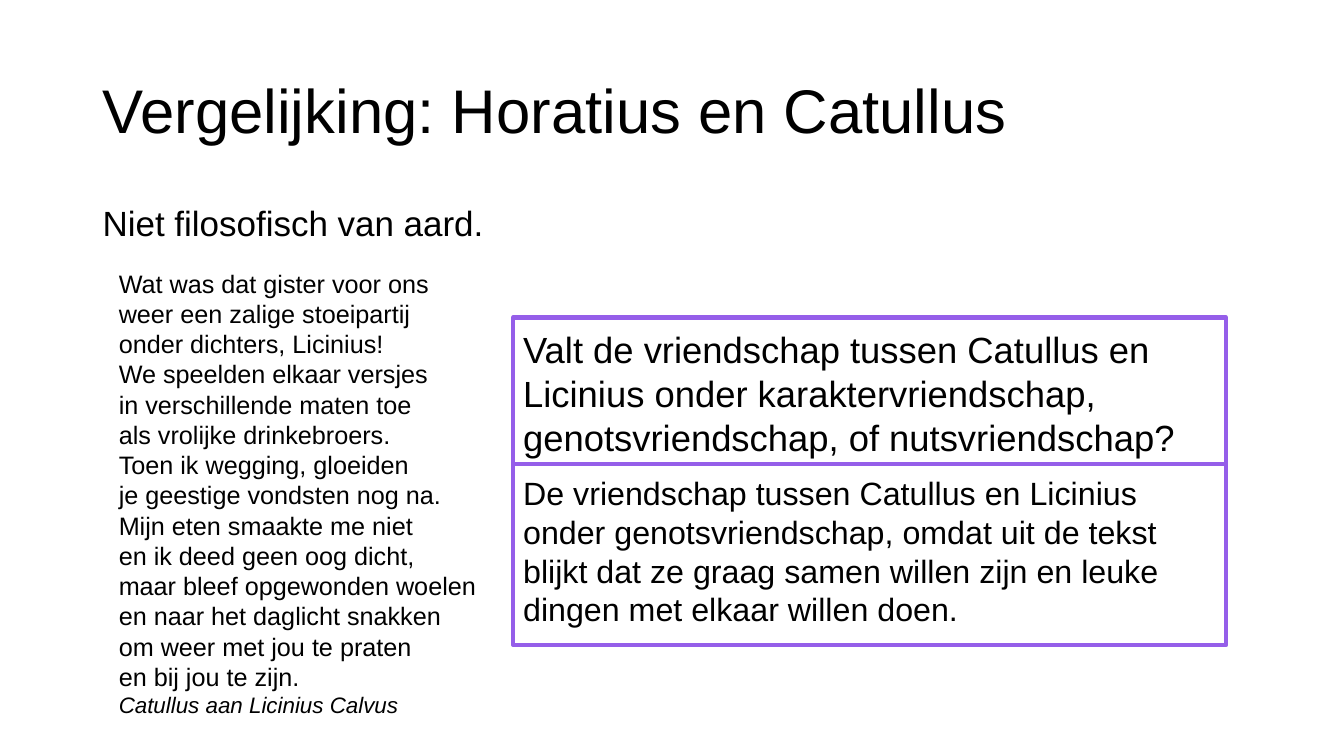
from lxml.etree import SubElement
from pptx import Presentation
from pptx.dml.color import RGBColor
from pptx.enum.shapes import MSO_SHAPE as Shape
from pptx.enum.text import MSO_ANCHOR as Anchor, PP_ALIGN as Align
from pptx.oxml.ns import qn
from pptx.util import Inches, Pt

BLACK = RGBColor(0x00, 0x00, 0x00)
WHITE = RGBColor(0xFF, 0xFF, 0xFF)
PURPLE = RGBColor(0x95, 0x5E, 0xE9)

POEM = """Wat was dat gister voor ons
weer een zalige stoeipartij
onder dichters, Licinius!
We speelden elkaar versjes
in verschillende maten toe
als vrolijke drinkebroers.
Toen ik wegging, gloeiden
je geestige vondsten nog na.
Mijn eten smaakte me niet
en ik deed geen oog dicht,
maar bleef opgewonden woelen
en naar het daglicht snakken
om weer met jou te praten
en bij jou te zijn.
Catullus aan Licinius Calvus"""
QUESTION = ("Valt de vriendschap tussen Catullus en Licinius onder karaktervriendschap, "
            "genotsvriendschap, of nutsvriendschap?")
ANSWER = ("De vriendschap tussen Catullus en Licinius onder genotsvriendschap, omdat uit "
          "de tekst blijkt dat ze graag samen willen zijn en leuke dingen met elkaar willen doen.")


class LessonSlide:
    """Holds the text style and the slide, and adds its elements."""

    font = "Arial"

    def __init__(self, deck):
        self.slide = deck.slides.add_slide(deck.slide_layouts[6])
        self.slide.background.fill.solid()
        self.slide.background.fill.fore_color.rgb = WHITE

    def fill_frame(self, frame, wording, size, inset=0.1, anchor=Anchor.TOP, spacing=1):
        frame.word_wrap = True
        frame.vertical_anchor = anchor
        frame.margin_left = frame.margin_right = Inches(0.1)
        frame.margin_top = frame.margin_bottom = Inches(inset)
        frame.text = wording
        for line in frame.paragraphs:
            line.alignment = Align.LEFT
            line.line_spacing = spacing
            line.font.name = self.font
            line.font.size = Pt(size)
            line.font.color.rgb = BLACK
        return frame

    def text(self, place, wording, size, **layout):
        box = self.slide.shapes.add_textbox(*map(Inches, place))
        return self.fill_frame(box.text_frame, wording, size, **layout)

    def framed(self, place, wording, size):
        box = self.slide.shapes.add_shape(Shape.RECTANGLE, *map(Inches, place))
        box.shadow.inherit = False
        box.fill.background()
        box.line.color.rgb = PURPLE
        box.line.width = Pt(3)
        SubElement(box._element.spPr.find(qn("a:ln")), qn("a:round"))
        return self.fill_frame(box.text_frame, wording, size)


def main():
    deck = Presentation()
    deck.slide_width, deck.slide_height = Inches(13.33), Inches(7.5)
    lesson = LessonSlide(deck)
    lesson.text((0.92, 0.4, 11.5, 1.45), "Vergelijking: Horatius en Catullus", 44,
                inset=0.05, anchor=Anchor.MIDDLE, spacing=0.9)
    lesson.text((0.92, 2, 11.5, 4.76), "Niet filosofisch van aard.", 25,
                inset=0.05, spacing=0.9)
    poem = lesson.text((1.08, 2.56, 4.2, 4.76), POEM, 18)
    credit = poem.paragraphs[-1].font
    credit.size, credit.italic = Pt(16), True
    lesson.framed((5.09, 3.15, 7.07, 1.45), QUESTION, 26)
    lesson.framed((5.09, 4.6, 7.07, 1.8), ANSWER, 23)
    deck.save("out.pptx")


if __name__ == "__main__":
    main()
